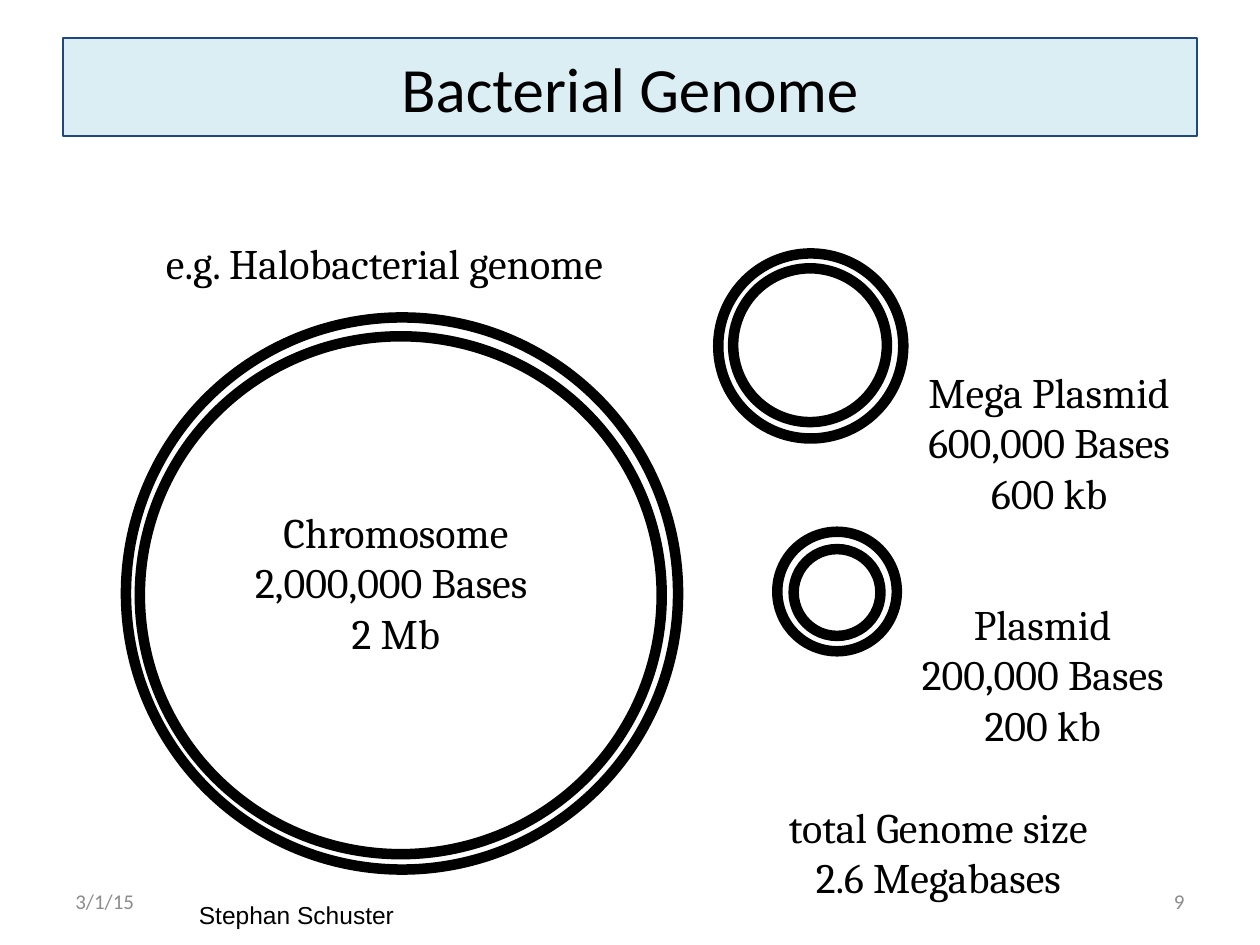
from dataclasses import dataclass

from pptx import Presentation
from pptx.dml.color import RGBColor
from pptx.enum.shapes import MSO_SHAPE
from pptx.enum.text import MSO_ANCHOR, MSO_AUTO_SIZE, PP_ALIGN
from pptx.util import Cm, Pt

OVAL = MSO_SHAPE.OVAL
LEFT, CENTER, RIGHT = PP_ALIGN.LEFT, PP_ALIGN.CENTER, PP_ALIGN.RIGHT
TOP, MIDDLE = MSO_ANCHOR.TOP, MSO_ANCHOR.MIDDLE
FIXED, GROW = MSO_AUTO_SIZE.NONE, MSO_AUTO_SIZE.SHAPE_TO_FIT_TEXT
TITLE_ONLY = 5


@dataclass(frozen=True)
class Theme:
    ink: RGBColor = RGBColor(0x00, 0x00, 0x00)
    muted: RGBColor = RGBColor(0x8C, 0x8C, 0x8C)
    banner: RGBColor = RGBColor(0xDB, 0xEE, 0xF4)
    banner_edge: RGBColor = RGBColor(0x1F, 0x49, 0x7D)
    heading_font: str = "Calibri"
    label_font: str = "Cambria"
    credit_font: str = "Arial"
    title_size: int = 36
    label_size: int = 24
    credit_size: int = 14
    footer_size: int = 12
    strand_width: int = 6


THEME = Theme()

STRANDS = [
    (2.54, 6.4, 11.13, 11.13),
    (2.82, 6.78, 10.52, 10.44),
    (14.48, 5.11, 3.73, 3.73),
    (14.78, 5.41, 3.1, 3.1),
    (15.67, 10.72, 2.41, 2.41),
    (16, 11.07, 1.75, 1.75),
]

LABELS = [
    ((3.05, 4.67, 9.4, 1.27), ["e.g. Halobacterial genome"]),
    ((4.83, 10.08, 6.3, 3.3), ["Chromosome", "2,000,000 Bases ", "2 Mb"]),
    ((18.42, 7.26, 5.46, 3.3), ["Mega Plasmid", "600,000 Bases", "600 kb"]),
    ((18.29, 11.94, 5.46, 3.3), ["Plasmid", "200,000 Bases", "200 kb"]),
    ((15.6, 16.03, 6.63, 2.29), ["total Genome size", "2.6 Megabases"]),
]


def lengths(place):
    return [Cm(value) for value in place]


def write_text(box, lines, *, font=THEME.label_font, size=THEME.label_size,
               color=THEME.ink, align=CENTER, anchor=MIDDLE, wrap=False, fit=GROW):
    frame = box.text_frame
    frame.text = "\n".join(lines)
    frame.word_wrap = wrap
    frame.auto_size = fit
    frame.vertical_anchor = anchor
    for para in frame.paragraphs:
        para.alignment = align
        for span in para.runs:
            span.font.name = font
            span.font.size = Pt(size)
            span.font.color.rgb = color


def add_title(page, text, place):
    title = page.shapes.title
    title.left, title.top, title.width, title.height = lengths(place)
    title.fill.solid()
    title.fill.fore_color.rgb = THEME.banner
    title.line.color.rgb = THEME.banner_edge
    title.line.width = Pt(1)
    write_text(title, [text], font=THEME.heading_font, size=THEME.title_size,
               wrap=True, fit=FIXED)


def add_strand(page, place):
    strand = page.shapes.add_shape(OVAL, *lengths(place))
    strand.shadow.inherit = False
    strand.fill.background()
    strand.line.color.rgb = THEME.ink
    strand.line.width = Pt(THEME.strand_width)


def add_label(page, place, lines, **style):
    write_text(page.shapes.add_textbox(*lengths(place)), lines, **style)


def add_footer(page, left, text, align):
    add_label(page, (left, 17.65, 5.92, 1.02), [text], font=THEME.heading_font,
              size=THEME.footer_size, color=THEME.muted, align=align,
              wrap=True, fit=FIXED)


def main():
    deck = Presentation()
    deck.slide_width, deck.slide_height = Cm(25.4), Cm(19.05)
    page = deck.slides.add_slide(deck.slide_layouts[TITLE_ONLY])
    add_title(page, "Bacterial Genome", (1.27, 0.76, 22.86, 1.98))
    for place in STRANDS:
        add_strand(page, place)
    for place, lines in LABELS:
        add_label(page, place, lines)
    add_label(page, (3.76, 18.01, 4.5, 0.86), ["Stephan Schuster"],
              font=THEME.credit_font, size=THEME.credit_size, align=LEFT, anchor=TOP)
    add_footer(page, 1.27, "3/1/15", LEFT)
    add_footer(page, 18.21, "9", RIGHT)
    deck.save("out.pptx")


if __name__ == "__main__":
    main()
